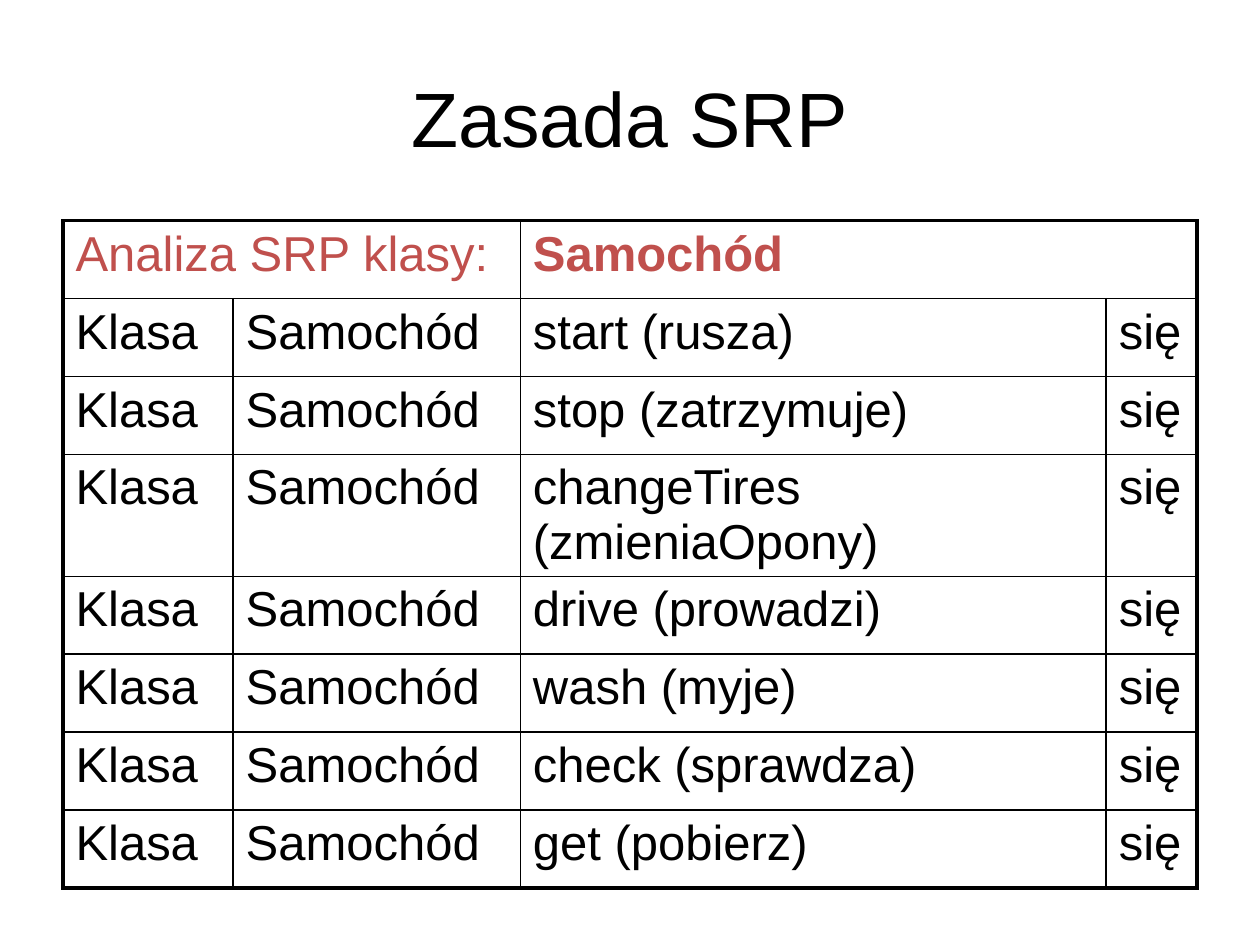
from lxml.etree import SubElement
from pptx import Presentation
from pptx.dml.color import RGBColor
from pptx.enum.text import MSO_ANCHOR, PP_ALIGN
from pptx.oxml.ns import qn
from pptx.util import Cm, Pt

COLORS = {"text": "000000", "accent": "C0504D", "border": "000000"}
METHODS = [
    "start (rusza)",
    "stop (zatrzymuje)",
    "changeTires (zmieniaOpony)",
    "drive (prowadzi)",
    "wash (myje)",
    "check (sprawdza)",
    "get (pobierz)",
]
COLUMN_WIDTHS = [3.43, 5.79, 11.81, 1.83]
ROW_HEIGHT = 1.57


class SlideBuilder:
    font_name = "Arial"
    title_size = 44
    body_size = 28
    outer_border = 2.25
    inner_border = 1

    def __init__(self, presentation):
        self.slide = presentation.slides.add_slide(presentation.slide_layouts[5])

    def format_paragraph(self, paragraph, size, color, bold=False):
        font = paragraph.font
        font.name = self.font_name
        font.size = Pt(size)
        font.bold = bold
        font.color.rgb = RGBColor.from_string(COLORS[color])

    def title(self, text, left, top, width, height):
        title = self.slide.shapes.title
        title.left, title.top = Cm(left), Cm(top)
        title.width, title.height = Cm(width), Cm(height)
        frame = title.text_frame
        frame.text = text
        frame.vertical_anchor = MSO_ANCHOR.MIDDLE
        frame.paragraphs[0].alignment = PP_ALIGN.CENTER
        self.format_paragraph(frame.paragraphs[0], self.title_size, "text")

    def table(self, rows, left, top, column_widths, row_height):
        """Add a table; None in rows extends the cell to its left."""
        table = self.slide.shapes.add_table(
            len(rows), len(column_widths), Cm(left), Cm(top),
            Cm(sum(column_widths)), Cm(row_height * len(rows)),
        ).table
        table.first_row = table.horz_banding = False
        for column, width in zip(table.columns, column_widths):
            column.width = Cm(width)
        for row in table.rows:
            row.height = Cm(row_height)

        for r, texts in enumerate(rows):
            for c, text in enumerate(texts):
                if text is None:
                    table.cell(r, c - 1).merge(table.cell(r, c))
        for r, texts in enumerate(rows):
            for c, text in enumerate(texts):
                cell = table.cell(r, c)
                last = c + cell.span_width - 1 if cell.is_merge_origin else c
                self.cell_borders(cell, {
                    "L": c == 0,
                    "R": last == len(texts) - 1,
                    "T": r == 0,
                    "B": r == len(rows) - 1,
                })
                cell.fill.background()
                if text is not None:
                    cell.text = text
                    self.format_paragraph(
                        cell.text_frame.paragraphs[0], self.body_size,
                        "accent" if r == 0 else "text", bold=r == 0 and c > 0,
                    )

    def cell_borders(self, cell, outer_sides):
        properties = cell._tc.get_or_add_tcPr()
        for side, is_outer in outer_sides.items():
            width = self.outer_border if is_outer else self.inner_border
            line = SubElement(properties, qn(f"a:ln{side}"), w=str(Pt(width)))
            fill = SubElement(line, qn("a:solidFill"))
            SubElement(fill, qn("a:srgbClr"), val=COLORS["border"])


def main():
    presentation = Presentation()
    presentation.slide_width, presentation.slide_height = Cm(25.4), Cm(19.05)
    builder = SlideBuilder(presentation)
    builder.title("Zasada SRP", 1.27, 0.76, 22.86, 3.18)
    header = ["Analiza SRP klasy:", None, "Samochód", None]
    rows = [header] + [["Klasa", "Samochód", method, "się"] for method in METHODS]
    builder.table(rows, 1.27, 4.45, COLUMN_WIDTHS, ROW_HEIGHT)
    presentation.save("out.pptx")


if __name__ == "__main__":
    main()
